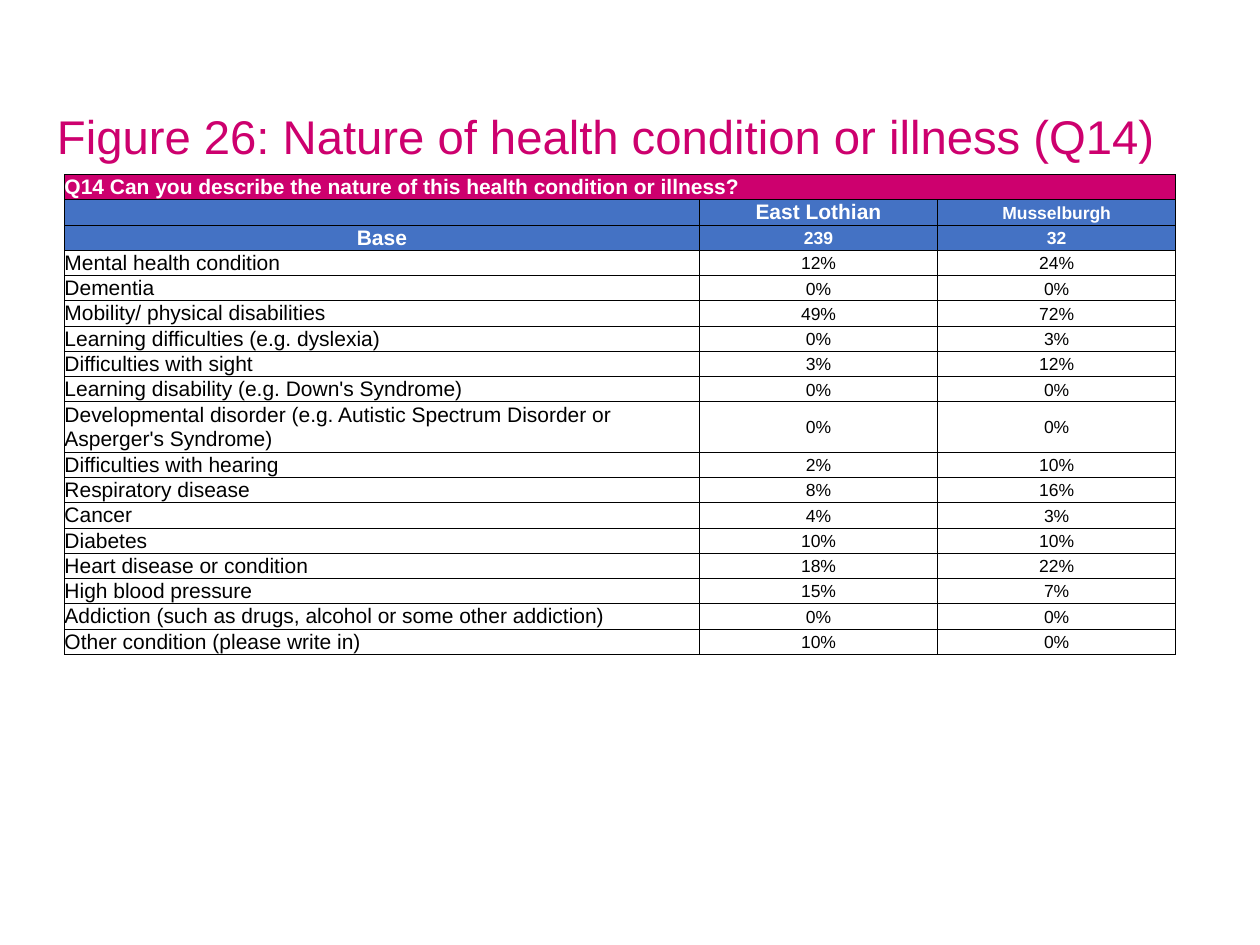
from dataclasses import dataclass

import pptx
import pptx.dml.color
import pptx.enum.text
import pptx.oxml
import pptx.oxml.ns
import pptx.slide
import pptx.table
import pptx.text.text
import pptx.util

Cm = pptx.util.Cm
ALIGN = pptx.enum.text.PP_ALIGN
MIDDLE = pptx.enum.text.MSO_ANCHOR.MIDDLE
COLORS = {"magenta": "CD006E", "blue": "4472C4", "white": "FFFFFF", "black": "000000"}
FONT = "Arial"
COLUMN_WIDTHS = (12.8, 4.8, 4.8)
TABLE_HEIGHT = 9.86
LABEL_SIZE, VALUE_SIZE = 12, 10


@dataclass(frozen=True)
class TableRow:
    """One row of the survey table with its look."""

    texts: tuple[str, str, str]
    fill: str = "white"
    color: str = "black"
    bold: bool = False
    label_alignment: ALIGN = ALIGN.LEFT
    sizes: tuple[int, int, int] = (LABEL_SIZE, VALUE_SIZE, VALUE_SIZE)


CONDITIONS = (
    ("Mental health condition", "12%", "24%"),
    ("Dementia", "0%", "0%"),
    ("Mobility/ physical disabilities", "49%", "72%"),
    ("Learning difficulties (e.g. dyslexia)", "0%", "3%"),
    ("Difficulties with sight", "3%", "12%"),
    ("Learning disability (e.g. Down's Syndrome)", "0%", "0%"),
    ("Developmental disorder (e.g. Autistic Spectrum Disorder or Asperger's Syndrome)", "0%", "0%"),
    ("Difficulties with hearing", "2%", "10%"),
    ("Respiratory disease", "8%", "16%"),
    ("Cancer", "4%", "3%"),
    ("Diabetes", "10%", "10%"),
    ("Heart disease or condition", "18%", "22%"),
    ("High blood pressure", "15%", "7%"),
    ("Addiction (such as drugs, alcohol or some other addiction)", "0%", "0%"),
    ("Other condition (please write in)", "10%", "0%"),
)
ROWS = (
    TableRow(("Q14 Can you describe the nature of this health condition or illness?", "", ""),
             "magenta", "white", True),
    TableRow(("", "East Lothian", "Musselburgh"), "blue", "white", True,
             sizes=(LABEL_SIZE, LABEL_SIZE, VALUE_SIZE)),
    TableRow(("Base", "239", "32"), "blue", "white", True, ALIGN.CENTER),
    *(TableRow(condition) for condition in CONDITIONS),
)


def rgb(name: str) -> pptx.dml.color.RGBColor:
    """Look up a named colour."""
    return pptx.dml.color.RGBColor.from_string(COLORS[name])


def add_text(paragraph: pptx.text.text._Paragraph, text: str, size: float,
             color: str, bold: bool = False) -> None:
    """Add one formatted run to a paragraph."""
    run = paragraph.add_run()
    run.text = text
    run.font.name = FONT
    run.font.size = pptx.util.Pt(size)
    run.font.bold = bold
    run.font.color.rgb = rgb(color)


def size_empty_paragraph(paragraph: pptx.text.text._Paragraph, size: int) -> None:
    """Set the line height of a paragraph that holds no text."""
    paragraph._p.append(pptx.oxml.parse_xml(
        f'<a:endParaRPr {pptx.oxml.ns.nsdecls("a")} sz="{size * 100}">'
        f'<a:latin typeface="{FONT}"/></a:endParaRPr>'))


def add_borders(cell: pptx.table._Cell) -> None:
    """Draw a thin black line on every side of a cell."""
    properties = cell._tc.get_or_add_tcPr()
    for side in ("lnL", "lnR", "lnT", "lnB"):
        properties.append(pptx.oxml.parse_xml(
            f'<a:{side} {pptx.oxml.ns.nsdecls("a")} w="{pptx.util.Pt(0.5)}"><a:solidFill>'
            f'<a:srgbClr val="{COLORS["black"]}"/></a:solidFill></a:{side}>'))


def fill_cell(cell: pptx.table._Cell, row: TableRow, column: int) -> None:
    """Write and style one cell of a table row."""
    size = row.sizes[column]
    inset = Cm(0.03 if size == VALUE_SIZE else 0)
    cell.margin_left = cell.margin_right = cell.margin_top = inset
    cell.margin_bottom = Cm(0)
    cell.vertical_anchor = MIDDLE
    add_borders(cell)
    cell.fill.solid()
    cell.fill.fore_color.rgb = rgb(row.fill)
    paragraph = cell.text_frame.paragraphs[0]
    paragraph.alignment = ALIGN.CENTER if column else row.label_alignment
    if row.texts[column]:
        add_text(paragraph, row.texts[column], size, row.color, row.bold)
    else:
        size_empty_paragraph(paragraph, size)


def add_title(slide: pptx.slide.Slide, text: str) -> None:
    """Add the slide heading."""
    shape = slide.shapes.add_textbox(Cm(0.9), Cm(0.76), Cm(24.5), Cm(3.96))
    shape.text_frame.word_wrap = True
    shape.text_frame.vertical_anchor = MIDDLE
    add_text(shape.text_frame.paragraphs[0], text, 27, "magenta")


def add_survey_table(slide: pptx.slide.Slide) -> None:
    """Add the table of health conditions by area, its rows as tall as their text."""
    frame = slide.shapes.add_table(
        len(ROWS), len(COLUMN_WIDTHS), Cm(1.3), Cm(3.52),
        Cm(sum(COLUMN_WIDTHS)), Cm(TABLE_HEIGHT))
    table = frame.table
    table.first_row = table.horz_banding = False
    for column, width in zip(table.columns, COLUMN_WIDTHS):
        column.width = Cm(width)
    for row_index, row in enumerate(ROWS):
        table.rows[row_index].height = Cm(0)
        for column_index in range(len(COLUMN_WIDTHS)):
            fill_cell(table.cell(row_index, column_index), row, column_index)
    table.cell(0, 0).merge(table.cell(0, len(COLUMN_WIDTHS) - 1))
    frame.height = Cm(TABLE_HEIGHT)


def main() -> None:
    """Build and save the presentation."""
    presentation = pptx.Presentation()
    presentation.slide_width, presentation.slide_height = Cm(25.4), Cm(19.05)
    slide = presentation.slides.add_slide(presentation.slide_layouts[6])
    add_title(slide, "Figure 26: Nature of health condition or illness (Q14)")
    add_survey_table(slide)
    presentation.save("out.pptx")


if __name__ == "__main__":
    main()
